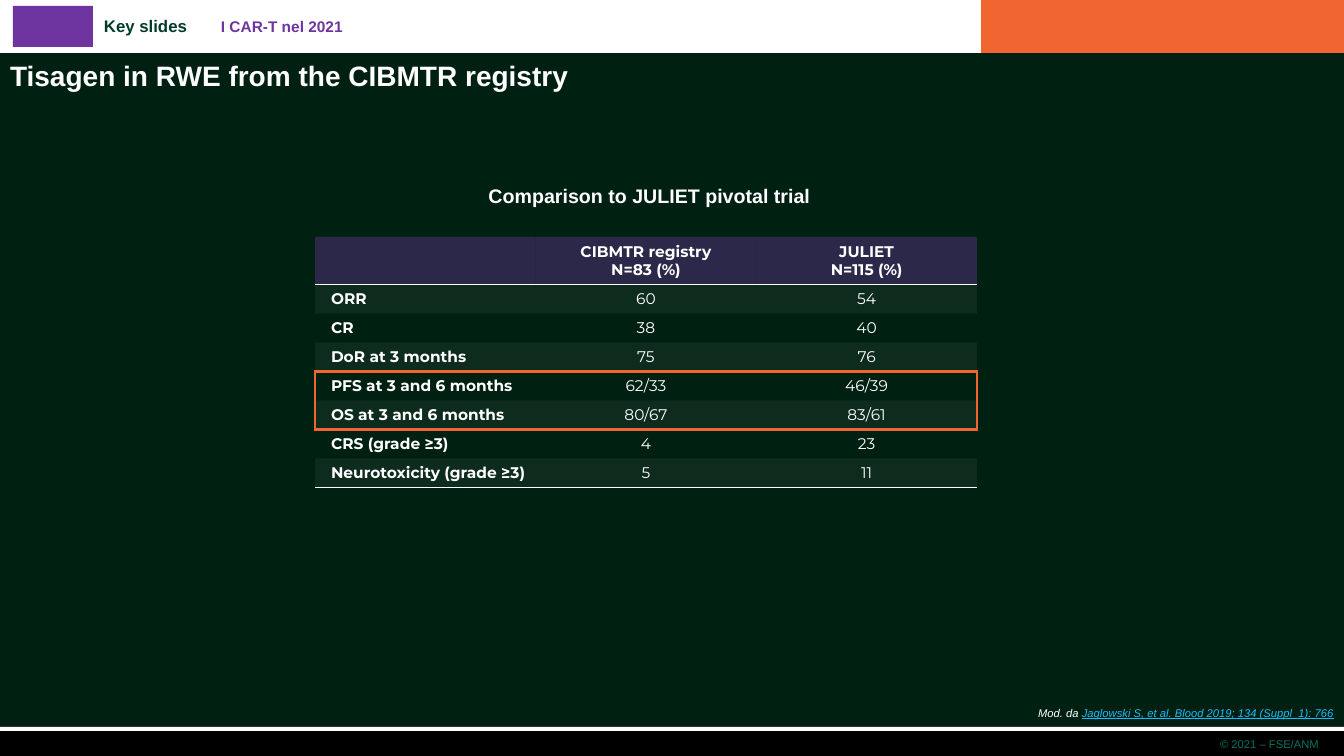
"""Build the slide that compares the CIBMTR registry with the JULIET trial."""
from dataclasses import dataclass

from lxml import etree
from pptx import Presentation
from pptx.dml.color import RGBColor
from pptx.enum.shapes import MSO_SHAPE
from pptx.enum.text import MSO_ANCHOR, MSO_AUTO_SIZE, PP_ALIGN
from pptx.oxml.ns import qn
from pptx.util import Emu, Pt

RECT = MSO_SHAPE.RECTANGLE
MIDDLE = MSO_ANCHOR.MIDDLE
FIXED = MSO_AUTO_SIZE.NONE
LEFT, CENTER, RIGHT = PP_ALIGN.LEFT, PP_ALIGN.CENTER, PP_ALIGN.RIGHT
SCALE = 914400 / 100.8
PLAIN = "{2D5ABB26-0587-4C30-8999-92F81FD0307C}"


@dataclass(frozen=True)
class Theme:
    back: str = "002112"
    white: str = "FFFFFF"
    black: str = "000000"
    orange: str = "F16530"
    purple: str = "6E349F"
    green: str = "003B29"
    teal: str = "007364"
    link: str = "17BBFD"
    sans: str = "Arial"
    grid: str = "Montserrat"
    title: int = 20
    head: int = 14
    tag: int = 12
    cell: int = 11
    note: int = 8


@dataclass(frozen=True)
class Box:
    x: int
    y: int
    w: int
    h: int

    def emu(self) -> tuple:
        return tuple(px(n) for n in (self.x, self.y, self.w, self.h))


@dataclass(frozen=True)
class Bar:
    box: Box
    color: str


@dataclass(frozen=True)
class Piece:
    text: str
    color: str
    under: bool = False


@dataclass(frozen=True)
class Label:
    box: Box
    size: int
    words: tuple
    align: PP_ALIGN = LEFT
    bold: bool = True
    slant: bool = False
    inset: int = 10


@dataclass(frozen=True)
class Edge:
    color: str
    width: float


T = Theme()
BARS = (
    Bar(Box(0, 0, 1344, 53), T.white),
    Bar(Box(981, 0, 363, 53), T.orange),
    Bar(Box(13, 6, 80, 41), T.purple),
    Bar(Box(0, 729, 1344, 27), T.black),
    Bar(Box(0, 727, 1344, 4), T.white),
)
TITLE = Label(Box(0, 55, 1008, 41), T.title,
              (Piece("Tisagen in RWE from the CIBMTR registry", T.white),))
LABELS = (
    Label(Box(94, 11, 202, 31), T.tag, (Piece("Key slides", T.green),)),
    Label(Box(221, 12, 564, 29), T.cell, (Piece("I CAR-T nel 2021", T.purple),), inset=0),
    Label(Box(63, 732, 1266, 24), T.note, (Piece("© 2021 – FSE/ANM", T.teal),),
          RIGHT, bold=False),
    Label(Box(171, 179, 957, 34), T.head,
          (Piece("Comparison to JULIET pivotal trial", T.white),), CENTER),
    Label(Box(834, 701, 510, 24), T.note,
          (Piece("Mod. da ", T.white),
           Piece("Jaglowski S, et al. Blood 2019; 134 (Suppl_1): 766", T.link, True)),
          RIGHT, bold=False, slant=True),
)
GRID = Box(315, 237, 662, 247)
HEAD = 47
ROWS = (
    ("", "CIBMTR registry\nN=83 (%)", "JULIET\nN=115 (%)"),
    ("ORR", "60", "54"),
    ("CR", "38", "40"),
    ("DoR at 3 months", "75", "76"),
    ("PFS at 3 and 6 months", "62/33", "46/39"),
    ("OS at 3 and 6 months", "80/67", "83/61"),
    ("CRS (grade ≥3)", "4", "23"),
    ("Neurotoxicity (grade ≥3)", "5", "11"),
)
FIRST, LAST = 4, 5
RULE = Edge(T.white, 1)
FRAME = Edge(T.orange, 2.25)
LINES = {1: RULE, FIRST: FRAME, LAST + 1: FRAME, len(ROWS): RULE}


def px(n: float) -> Emu:
    return Emu(round(n * SCALE))


def rgb(color: str) -> RGBColor:
    return RGBColor.from_string(color)


def draw_bar(slide, bar: Bar) -> None:
    shape = slide.shapes.add_shape(RECT, *bar.box.emu())
    shape.shadow.inherit = False
    shape.fill.solid()
    shape.fill.fore_color.rgb = rgb(bar.color)
    shape.line.fill.background()


def set_text(shape, label: Label) -> None:
    shape.left, shape.top, shape.width, shape.height = label.box.emu()
    frame = shape.text_frame
    frame.word_wrap = True
    frame.auto_size = FIXED
    frame.margin_left = px(label.inset)
    para = frame.paragraphs[0]
    para.alignment = label.align
    font = para.font
    font.name, font.size = T.sans, Pt(label.size)
    font.bold, font.italic = label.bold, label.slant
    for piece in label.words:
        run = para.add_run()
        run.text = piece.text
        run.font.color.rgb = rgb(piece.color)
        run.font.underline = piece.under


def set_edges(cell, row: int, col: int) -> None:
    boxed = FIRST <= row <= LAST
    sides = {
        "a:lnL": FRAME if boxed and col == 0 else None,
        "a:lnR": FRAME if boxed and col == 2 else None,
        "a:lnT": LINES.get(row),
        "a:lnB": LINES.get(row + 1),
    }
    props = cell._tc.get_or_add_tcPr()
    for spot, (tag, edge) in enumerate(sides.items()):
        line = etree.Element(qn(tag))
        if edge:
            line.set("w", str(int(Pt(edge.width))))
            fill = etree.SubElement(line, qn("a:solidFill"))
            etree.SubElement(fill, qn("a:srgbClr"), val=edge.color)
        else:
            etree.SubElement(line, qn("a:noFill"))
        props.insert(spot, line)


def set_fill(cell, row: int) -> None:
    if row and row % 2 == 0:
        cell.fill.background()
        return
    color, alpha = (T.white, 5) if row else (T.purple, 40)
    cell.fill.solid()
    cell.fill.fore_color.rgb = rgb(color)
    for node in cell._tc.get_or_add_tcPr().iter(qn("a:srgbClr")):
        etree.SubElement(node, qn("a:alpha"), val=str(alpha * 1000))


def draw_grid(slide) -> None:
    frame = slide.shapes.add_table(len(ROWS), len(ROWS[0]), *GRID.emu())
    table = frame.table
    table.first_row = table.horz_banding = False
    for style in frame.element.iter(qn("a:tableStyleId")):
        style.text = PLAIN
    for row, texts in enumerate(ROWS):
        table.rows[row].height = px((GRID.h - HEAD) / (len(ROWS) - 1) if row else HEAD)
        for col, text in enumerate(texts):
            cell = table.cell(row, col)
            cell.text = text
            cell.vertical_anchor = MIDDLE
            if col == 0:
                cell.margin_left = px(16)
            for para in cell.text_frame.paragraphs:
                para.alignment = CENTER if col else LEFT
                para.font.name, para.font.size = T.grid, Pt(T.cell)
                para.font.bold = row == 0 or col == 0
                para.font.color.rgb = rgb(T.white)
            set_fill(cell, row)
            set_edges(cell, row, col)


def main() -> None:
    deck = Presentation()
    deck.slide_width, deck.slide_height = px(1344), px(756)
    slide = deck.slides.add_slide(deck.slide_layouts[5])
    slide.background.fill.solid()
    slide.background.fill.fore_color.rgb = rgb(T.back)
    for bar in BARS:
        draw_bar(slide, bar)
    set_text(slide.shapes.title, TITLE)
    for label in LABELS:
        set_text(slide.shapes.add_textbox(*label.box.emu()), label)
    draw_grid(slide)
    deck.save("out.pptx")


if __name__ == "__main__":
    main()
